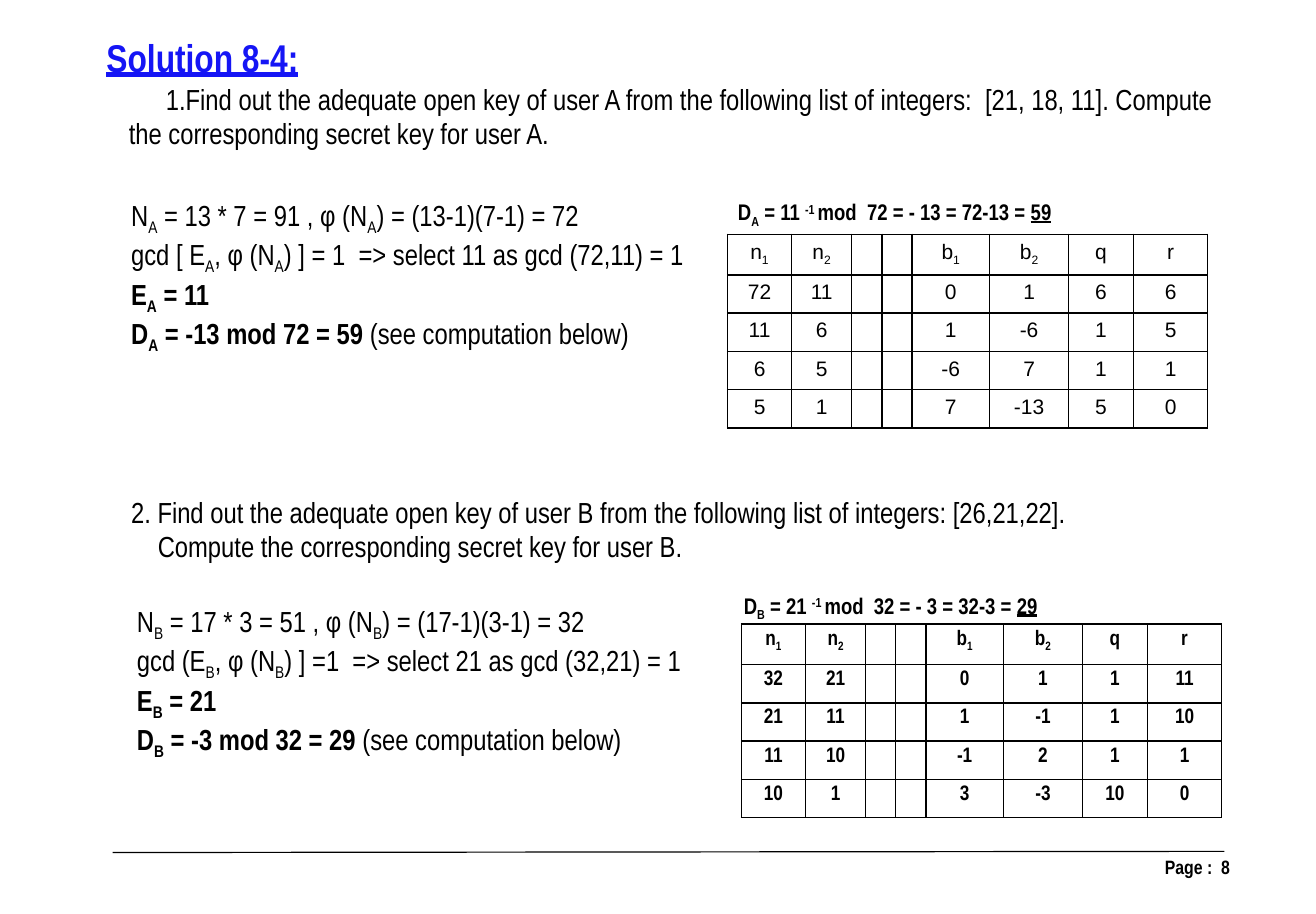
from lxml.etree import SubElement
from pptx import Presentation
from pptx.dml.color import RGBColor
from pptx.enum.shapes import MSO_CONNECTOR
from pptx.enum.text import MSO_ANCHOR, MSO_AUTO_SIZE, PP_ALIGN
from pptx.oxml.ns import qn
from pptx.util import Inches, Pt

BLACK = RGBColor(0x00, 0x00, 0x00)
BLUE = RGBColor(0x15, 0x15, 0xF5)
NARROW = "Arial Narrow"
BASELINES = {"_": "-25000", "^": "30000"}
HEADERS = ["n|_1", "n|_2", "", "", "b|_1", "b|_2", "q", "r"]
COLUMN_WIDTHS = [0.55, 0.52, 0.25, 0.25, 0.67, 0.68, 0.56, 0.64]
HEADER_HEIGHT, ROW_HEIGHT = 0.35, 0.33


def place(part, box):
    """Move a part to a box given in inches."""
    part.left, part.top, part.width, part.height = (Inches(length) for length in box)


def prepare_frame(frame, wrap=True, inset_x=0.11, inset_y=0.05):
    """Set wrapping, insets and top anchoring."""
    frame.auto_size = MSO_AUTO_SIZE.NONE
    frame.word_wrap = wrap
    frame.vertical_anchor = MSO_ANCHOR.TOP
    frame.margin_left = frame.margin_right = Inches(inset_x)
    frame.margin_top = frame.margin_bottom = Inches(inset_y)


def write_runs(paragraph, marked, size, bold=False, font=NARROW, color=BLACK):
    """Write runs split by |, led by _ subscript, ^ superscript, # underline or ~ regular."""
    for piece in marked.split("|"):
        mark = piece[:1] if piece[:1] in ("_", "^", "#", "~") else ""
        run = paragraph.add_run()
        run.text = piece[len(mark):]
        run.font.name = font
        run.font.size = Pt(size)
        run.font.bold = bold and mark != "~"
        run.font.color.rgb = color
        if mark == "#":
            run.font.underline = True
        if mark in BASELINES:
            run.font._element.set("baseline", BASELINES[mark])


def write_lines(frame, lines, size):
    """Write one paragraph for each pair of marked text and boldness."""
    for index, (marked, bold) in enumerate(lines):
        paragraph = frame.add_paragraph() if index else frame.paragraphs[0]
        write_runs(paragraph, marked, size, bold)


def add_title(title, box):
    """Fill the title placeholder."""
    place(title, box)
    prepare_frame(title.text_frame, wrap=False)
    heading = title.text_frame.paragraphs[0]
    heading.alignment = PP_ALIGN.CENTER
    write_runs(heading, "#Solution 8-4:", 24, True, color=BLUE)


def add_question(body, box, lines, indents, numbered=False):
    """Fill a body placeholder with a question, one (margin, indent) pair per line."""
    place(body, box)
    prepare_frame(body.text_frame)
    write_lines(body.text_frame, [(line, False) for line in lines], 18)
    for paragraph, (margin, indent) in zip(body.text_frame.paragraphs, indents):
        paragraph.space_before = Pt(0)
        properties = paragraph._p.get_or_add_pPr()
        properties.set("marL", str(Inches(margin)))
        properties.set("indent", str(Inches(indent)))
        if numbered:
            SubElement(properties, qn("a:buFont"), typeface=NARROW)
            SubElement(properties, qn("a:buAutoNum"), type="arabicPeriod")
            tabs = SubElement(properties, qn("a:tabLst"))
            SubElement(tabs, qn("a:tab"), pos=str(Inches(margin + indent)), algn="l")
        else:
            SubElement(properties, qn("a:buNone"))


def add_text(slide, box, lines, size, inset_y=0.05):
    """Add a text box of marked lines."""
    text_box = slide.shapes.add_textbox(*(Inches(length) for length in box))
    prepare_frame(text_box.text_frame, inset_y=inset_y)
    write_lines(text_box.text_frame, lines, size)


def add_cell_borders(cell):
    """Draw thin black lines around a cell."""
    properties = cell._tc.get_or_add_tcPr()
    for position, side in enumerate(("a:lnL", "a:lnR", "a:lnT", "a:lnB")):
        line = properties.makeelement(qn(side), {"w": str(Pt(1))})
        fill = SubElement(line, qn("a:solidFill"))
        SubElement(fill, qn("a:srgbClr"), val=str(BLACK))
        properties.insert(position, line)


def add_euclid_table(slide, left, top, steps, font, bold):
    """Add the table of the extended Euclidean steps."""
    rows = [HEADERS] + [step[:2] + ["", ""] + step[2:] for step in steps]
    height = HEADER_HEIGHT + ROW_HEIGHT * len(steps)
    table = slide.shapes.add_table(
        len(rows), len(HEADERS), Inches(left), Inches(top),
        Inches(sum(COLUMN_WIDTHS)), Inches(height)).table
    table.first_row = table.horz_banding = False
    for column, width in zip(table.columns, COLUMN_WIDTHS):
        column.width = Inches(width)
    for r, values in enumerate(rows):
        table.rows[r].height = Inches(ROW_HEIGHT if r else HEADER_HEIGHT)
        for c, value in enumerate(values):
            cell = table.cell(r, c)
            cell.fill.background()
            cell.margin_left = cell.margin_right = Inches(0.11)
            cell.margin_top = cell.margin_bottom = Inches(0.05)
            add_cell_borders(cell)
            paragraph = cell.text_frame.paragraphs[0]
            paragraph.alignment = PP_ALIGN.CENTER
            if value:
                write_runs(paragraph, value, 13, bold, font)
            else:
                SubElement(paragraph._p, qn("a:endParaRPr"), sz="1300")


def add_footer(slide, box):
    """Add the rule and the page number below it."""
    left, top, width, height = box
    rule = slide.shapes.add_connector(
        MSO_CONNECTOR.STRAIGHT, Inches(left), Inches(top + 0.01),
        Inches(left + 9.58), Inches(top))
    rule.line.color.rgb = BLACK
    rule.line.width = Pt(0.75)
    SubElement(rule._element.spPr, qn("a:effectLst"))
    page = slide.shapes.add_textbox(
        Inches(left + width - 2.58), Inches(top - 0.03), Inches(2.58), Inches(height))
    prepare_frame(page.text_frame, inset_x=0.12, inset_y=0.06)
    number = page.text_frame.paragraphs[0]
    number.alignment = PP_ALIGN.RIGHT
    write_runs(number, "Page :  8", 12, True)


def build_solution(slide):
    """Build the slide with the key computations of users A and B."""
    title, question_a, question_b = slide.placeholders
    add_title(title, (0.8, 0.24, 1.89, 0.51))
    add_question(question_a, (0.89, 0.65, 9.94, 0.72), [
        "Find out the adequate open key of user A from the following list of integers:  "
        "[21, 18, 11]. Compute the corresponding secret key for user A."],
        [(0.11, 0.32)], numbered=True)
    add_text(slide, (1.02, 1.65, 5.12, 1.32), [
        ("N|_A| = 13 * 7 = 91 , φ (N|_A|) = (13-1)(7-1) = 72", False),
        ("gcd [ E|_A|, φ (N|_A|) ] = 1  => select 11 as gcd (72,11) = 1", False),
        ("E|_A| = 11", True),
        ("D|_A| = -13 mod 72 = 59 |~(see computation below)", True)], 18)
    add_text(slide, (6.25, 1.65, 3.54, 0.35), [
        ("D|_A| = 11 |^-1 |mod  72 = - 13 = 72-13 = |#59", True)], 14, 0.06)
    add_euclid_table(slide, 6.27, 2.02, [
        ["72", "11", "0", "1", "6", "6"],
        ["11", "6", "1", "-6", "1", "5"],
        ["6", "5", "-6", "7", "1", "1"],
        ["5", "1", "7", "-13", "5", "0"]], "Arial", False)
    add_question(question_b, (0.91, 4.21, 10.43, 0.72), [
        "2. Find out the adequate open key of user B from the following list of integers: "
        "[26,21,22].",
        "Compute the corresponding secret key for user B."], [(0.11, 0), (0.34, 0)])
    add_text(slide, (1.07, 5.15, 5.05, 1.32), [
        ("N|_B| = 17 * 3 = 51 , φ (N|_B|) = (17-1)(3-1) = 32", False),
        ("gcd (E|_B|, φ (N|_B|) ] =1  => select 21 as gcd (32,21) = 1", False),
        ("E|_B| = 21", True),
        ("D|_B| = -3 mod 32 = 29 |~(see computation below)", True)], 18)
    add_text(slide, (6.3, 5.04, 3.01, 0.35), [
        ("D|_B| = 21 |^-1 |mod  32 = - 3 = 32-3 = |#29", True)], 14, 0.06)
    add_euclid_table(slide, 6.39, 5.38, [
        ["32", "21", "0", "1", "1", "11"],
        ["21", "11", "1", "-1", "1", "10"],
        ["11", "10", "-1", "2", "1", "1"],
        ["10", "1", "3", "-3", "10", "0"]], NARROW, True)
    add_footer(slide, (0.97, 7.34, 9.75, 0.52))


def main():
    """Create the presentation and save it."""
    presentation = Presentation()
    presentation.slide_width = Inches(11.34)
    presentation.slide_height = Inches(7.88)
    build_solution(presentation.slides.add_slide(presentation.slide_layouts[3]))
    presentation.save("out.pptx")


if __name__ == "__main__":
    main()
